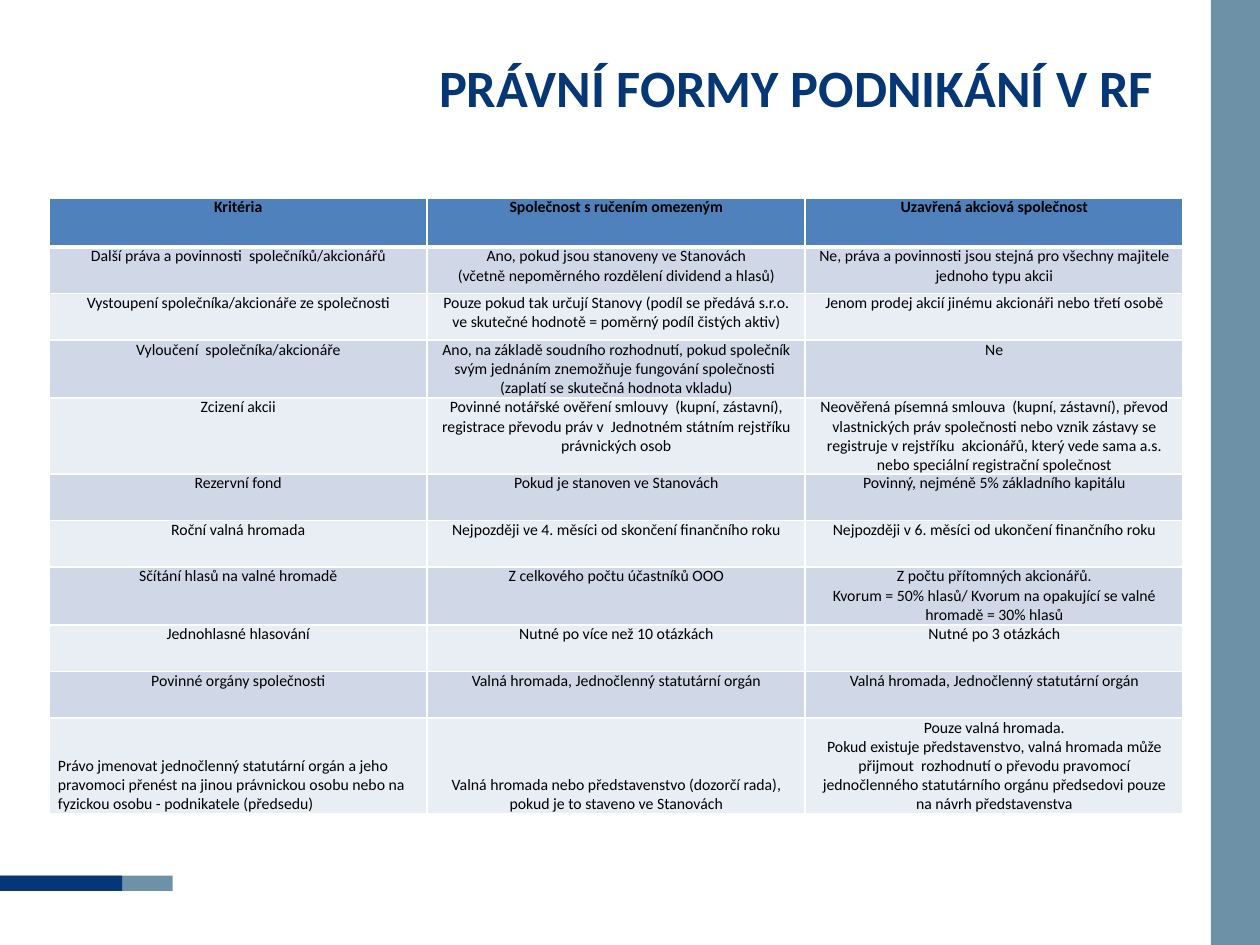
"""Build a slide with a table comparing two legal forms of business in RF."""
from dataclasses import dataclass

from lxml.etree import SubElement
from pptx import Presentation
from pptx.dml.color import RGBColor as Color
from pptx.enum.shapes import MSO_SHAPE as Shape
from pptx.enum.text import MSO_ANCHOR as Anchor, PP_ALIGN as Align
from pptx.oxml.ns import qn
from pptx.util import Inches, Pt


@dataclass(frozen=True)
class Theme:
    font: str = "Calibri"
    navy: str = "053776"
    teal: str = "6D92A7"
    header: str = "4F81BD"
    bands: tuple = ("D0D8E8", "E9EDF4")
    border: str = "FFFFFF"
    text: str = "000000"
    title_size: int = 30
    cell_size: int = 9


HEADINGS = ["Kritéria", "Společnost s ručením omezeným", "Uzavřená akciová společnost"]
CRITERIA = [
    ["Další práva a povinnosti  společníků/akcionářů",
     "Ano, pokud jsou stanoveny ve Stanovách\n(včetně nepoměrného rozdělení dividend a hlasů)",
     "Ne, práva a povinnosti jsou stejná pro všechny majitele jednoho typu akcii"],
    ["Vystoupení společníka/akcionáře ze společnosti",
     "Pouze pokud tak určují Stanovy (podíl se předává s.r.o. ve skutečné hodnotě = "
     "poměrný podíl čistých aktiv)",
     "Jenom prodej akcií jinému akcionáři nebo třetí osobě"],
    ["Vyloučení  společníka/akcionáře",
     "Ano, na základě soudního rozhodnutí, pokud společník svým jednáním znemožňuje "
     "fungování společnosti  (zaplatí se skutečná hodnota vkladu)",
     "Ne"],
    ["Zcizení akcii",
     "Povinné notářské ověření smlouvy  (kupní, zástavní), registrace převodu práv v  "
     "Jednotném státním rejstříku právnických osob",
     "Neověřená písemná smlouva  (kupní, zástavní), převod vlastnických práv společnosti "
     "nebo vznik zástavy se registruje v rejstříku  akcionářů, který vede sama a.s. nebo "
     "speciální registrační společnost"],
    ["Rezervní fond", "Pokud je stanoven ve Stanovách",
     "Povinný, nejméně 5% základního kapitálu"],
    ["Roční valná hromada", "Nejpozději ve 4. měsíci od skončení finančního roku",
     "Nejpozději v 6. měsíci od ukončení finančního roku"],
    ["Sčítání hlasů na valné hromadě", "Z celkového počtu účastníků ООО",
     "Z počtu přítomných akcionářů.\n"
     "Kvorum = 50% hlasů/ Kvorum na opakující se valné hromadě = 30% hlasů"],
    ["Jednohlasné hlasování", "Nutné po více než 10 otázkách", "Nutné po 3 otázkách"],
    ["Povinné orgány společnosti"] + ["Valná hromada, Jednočlenný statutární orgán"] * 2,
    ["Právo jmenovat jednočlenný statutární orgán a jeho pravomoci přenést na jinou "
     "právnickou osobu nebo na fyzickou osobu - podnikatele (předsedu)",
     "Valná hromada nebo představenstvo (dozorčí rada), pokud je to staveno ve Stanovách",
     "Pouze valná hromada.\nPokud existuje představenstvo, valná hromada může přijmout  "
     "rozhodnutí o převodu pravomocí jednočlenného statutárního orgánu předsedovi pouze "
     "na návrh představenstva"],
]
ROW_HEIGHTS = [0.39, 0.37, 0.37, 0.46, 0.6, 0.37, 0.37, 0.46, 0.37, 0.37, 0.76]


def write_text(frame, text, *, font, size, color, bold=False, align=Align.CENTER):
    """Fill a text frame with one paragraph per line of text."""
    frame.word_wrap = True
    for index, line in enumerate(text.split("\n")):
        paragraph = frame.paragraphs[0] if index == 0 else frame.add_paragraph()
        paragraph.alignment = align
        run = paragraph.add_run()
        run.text = line
        run.font.name = font
        run.font.size = Pt(size)
        run.font.bold = bold
        run.font.color.rgb = Color.from_string(color)


class SlideBuilder:
    """Draw each kind of element on the current slide in one style."""

    def __init__(self, slide, theme):
        self.slide = slide
        self.theme = theme

    def bar(self, left, top, width, height, color):
        """Add a plain filled rectangle."""
        shape = self.slide.shapes.add_shape(
            Shape.RECTANGLE, *map(Inches, (left, top, width, height)))
        shape.shadow.inherit = False
        shape.fill.solid()
        shape.fill.fore_color.rgb = Color.from_string(color)
        shape.line.fill.background()

    def title(self, text, left, top, width, height):
        """Add the slide title."""
        box = self.slide.shapes.add_textbox(*map(Inches, (left, top, width, height)))
        box.text_frame.vertical_anchor = Anchor.MIDDLE
        write_text(box.text_frame, text, font=self.theme.font, size=self.theme.title_size,
                   color=self.theme.navy, bold=True)

    def borders(self, cell, top=1, bottom=1):
        """Set the four borders of a cell, with widths in points."""
        properties = cell._tc.get_or_add_tcPr()
        for side, width in (("L", 1), ("R", 1), ("T", top), ("B", bottom)):
            line = SubElement(properties, qn(f"a:ln{side}"), w=str(Pt(width)))
            fill = SubElement(line, qn("a:solidFill"))
            SubElement(fill, qn("a:srgbClr"), val=self.theme.border)

    def table(self, rows, heights, left, top, width):
        """Add a banded table whose first row is the header."""
        columns = len(rows[0])
        table = self.slide.shapes.add_table(
            len(rows), columns, *map(Inches, (left, top, width, sum(heights)))).table
        table.first_row = table.horz_banding = False
        for column in table.columns:
            column.width = Inches(width / columns)
        last = len(rows) - 1
        for row_index, (texts, height) in enumerate(zip(rows, heights)):
            table.rows[row_index].height = Inches(height)
            is_header = row_index == 0
            color = self.theme.header if is_header else self.theme.bands[(row_index - 1) % 2]
            for column_index, text in enumerate(texts):
                cell = table.cell(row_index, column_index)
                cell.margin_left = cell.margin_right = Inches(0.07)
                cell.margin_top = cell.margin_bottom = 0
                cell.vertical_anchor = Anchor.BOTTOM if row_index == last else Anchor.TOP
                self.borders(cell, top=3 if row_index == 1 else 1, bottom=3 if is_header else 1)
                cell.fill.solid()
                cell.fill.fore_color.rgb = Color.from_string(color)
                starts_last = row_index == last and column_index == 0
                write_text(cell.text_frame, text, font=self.theme.font,
                           size=self.theme.cell_size, color=self.theme.text, bold=is_header,
                           align=Align.LEFT if starts_last else Align.CENTER)


def main():
    """Build and save the presentation."""
    presentation = Presentation()
    presentation.slide_width, presentation.slide_height = Inches(10), Inches(7.5)
    theme = Theme()
    builder = SlideBuilder(presentation.slides.add_slide(presentation.slide_layouts[6]), theme)
    builder.bar(9.61, 0, 0.39, 7.5, theme.teal)
    builder.bar(0, 6.95, 1.37, 0.12, theme.teal)
    builder.bar(0, 6.95, 0.97, 0.12, theme.navy)
    builder.title("PRÁVNÍ FORMY PODNIKÁNÍ V RF", 3.03, 0.06, 6.58, 1.25)
    builder.table([HEADINGS] + CRITERIA, ROW_HEIGHTS, 0.39, 1.57, 9)
    presentation.save("out.pptx")


if __name__ == "__main__":
    main()
